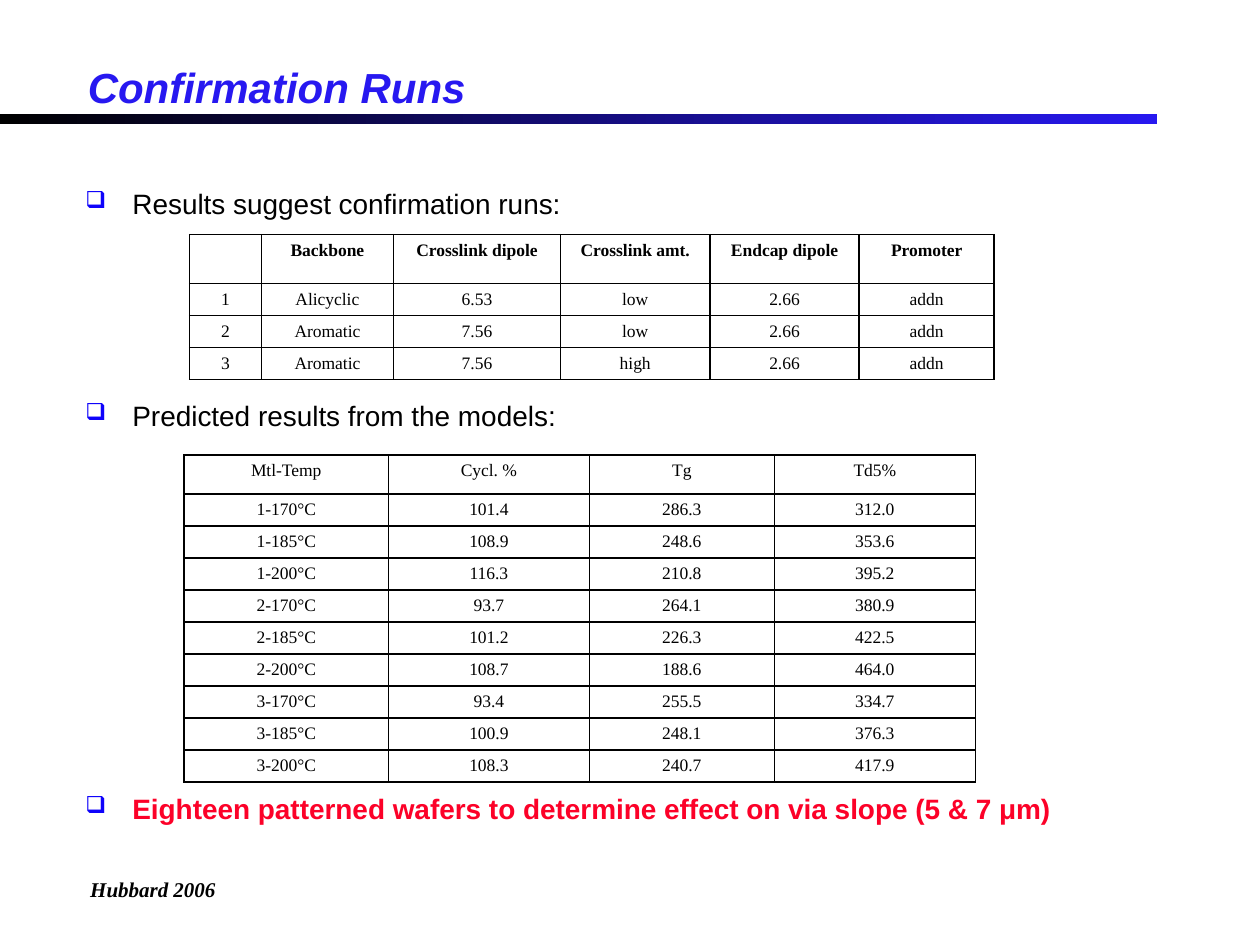
from lxml.etree import SubElement
from pptx import Presentation
from pptx.dml.color import RGBColor
from pptx.enum.shapes import MSO_SHAPE as Shape
from pptx.enum.text import MSO_ANCHOR as Anchor, PP_ALIGN as Align
from pptx.oxml.ns import qn
from pptx.util import Cm, Pt

COLORS = {"black": "000000", "blue": "2718F0", "bullet": "0F03FB", "red": "FC0128"}
SANS, SERIF = "Arial", "Times New Roman"


class SlideBuilder:
    def __init__(self, slide, colors):
        self.slide = slide
        self.colors = colors

    def color(self, name):
        return RGBColor.from_string(self.colors[name])

    def run(self, paragraph, text, size, font, color="black", bold=False, italic=False):
        run = paragraph.add_run()
        run.text = text
        run.font.size = Pt(size)
        run.font.name = font
        run.font.bold = bold
        run.font.italic = italic
        run.font.color.rgb = self.color(color)

    def frame(self, left, top, width, height, wrap=True, anchor=Anchor.TOP):
        box = self.slide.shapes.add_textbox(Cm(left), Cm(top), Cm(width), Cm(height))
        box.text_frame.word_wrap = wrap
        box.text_frame.vertical_anchor = anchor
        return box.text_frame

    def gradient_bar(self, left, top, width, height, start, end):
        bar = self.slide.shapes.add_shape(
            Shape.RECTANGLE, Cm(left), Cm(top), Cm(width), Cm(height))
        bar.shadow.inherit = False
        bar.line.fill.background()
        bar.fill.gradient()
        bar.fill.gradient_angle = 0
        for stop, name in zip(bar.fill.gradient_stops, (start, end)):
            stop.color.rgb = self.color(name)

    def heading(self, text, place, size, font, color, wrap=True, anchor=Anchor.TOP):
        frame = self.frame(*place, wrap=wrap, anchor=anchor)
        self.run(frame.paragraphs[0], text, size, font, color, bold=True, italic=True)

    def bullets(self, place, items):
        frame = self.frame(*place)
        for index, (text, gap, color, bold) in enumerate(items):
            paragraph = frame.add_paragraph() if index else frame.paragraphs[0]
            props = paragraph._p.get_or_add_pPr()
            props.set("marL", str(Cm(0.95)))
            props.set("indent", str(Cm(-0.95)))
            bullet_color = SubElement(props, qn("a:buClr"))
            SubElement(bullet_color, qn("a:srgbClr"), val=self.colors["bullet"])
            SubElement(props, qn("a:buSzPct"), val="84000")
            SubElement(props, qn("a:buChar"), char="❑")
            if gap:
                paragraph.space_before = Pt(gap)
            self.run(paragraph, text, 16, SANS, color, bold)

    def borders(self, cell):
        props = cell._tc.get_or_add_tcPr()
        for side in ("lnL", "lnR", "lnT", "lnB"):
            line = SubElement(props, qn(f"a:{side}"), w=str(Pt(1)))
            fill = SubElement(line, qn("a:solidFill"))
            SubElement(fill, qn("a:srgbClr"), val=self.colors["black"])

    def table(self, left, top, widths, header_height, row_height, rows, bold_header=False):
        heights = [header_height] + [row_height] * (len(rows) - 1)
        table = self.slide.shapes.add_table(
            len(rows), len(widths), Cm(left), Cm(top),
            Cm(sum(widths)), Cm(sum(heights))).table
        table.first_row = table.horz_banding = False
        for column, width in zip(table.columns, widths):
            column.width = Cm(width)
        for index, (row, height, values) in enumerate(zip(table.rows, heights, rows)):
            row.height = Cm(height)
            for cell, value in zip(row.cells, values):
                self.borders(cell)
                cell.fill.background()
                cell.margin_top, cell.margin_bottom = Cm(0.12), Cm(0.1)
                paragraph = cell.text_frame.paragraphs[0]
                paragraph.alignment = Align.CENTER
                if value:
                    self.run(paragraph, value, 10, SERIF, bold=bold_header and index == 0)
                else:
                    SubElement(paragraph._p, qn("a:endParaRPr"), sz="1000")


def main():
    deck = Presentation()
    deck.slide_width, deck.slide_height = Cm(25.4), Cm(19.05)
    page = SlideBuilder(deck.slides.add_slide(deck.slide_layouts[6]), COLORS)

    page.gradient_bar(0, 2.3, 23.32, 0.2, "black", "blue")
    page.heading("Hubbard 2006", (1.57, 17.55, 3.05, 0.76), 12, SERIF, "black", wrap=False)
    page.heading("Confirmation Runs", (1.52, 0.89, 22.58, 1.7), 24, SANS, "blue",
                 anchor=Anchor.MIDDLE)
    page.bullets((1.47, 3.63, 22.81, 13.97), [
        ("Results suggest confirmation runs:", 0, "black", False),
        ("Predicted results from the models:", 102, "black", False),
        ("Eighteen patterned wafers to determine effect on via slope (5 & 7 μm)",
         205.5, "red", True),
    ])

    confirmation_runs = [
        ("", "Backbone", "Crosslink dipole", "Crosslink amt.", "Endcap dipole", "Promoter"),
        ("1", "Alicyclic", "6.53", "low", "2.66", "addn"),
        ("2", "Aromatic", "7.56", "low", "2.66", "addn"),
        ("3", "Aromatic", "7.56", "high", "2.66", "addn"),
    ]
    page.table(3.82, 4.73, [1.45, 2.66, 3.37, 3.01, 3.01, 2.72], 0.99, 0.64,
               confirmation_runs, bold_header=True)

    predicted_results = [
        ("Mtl-Temp", "Cycl. %", "Tg", "Td5%"),
        ("1-170°C", "101.4", "286.3", "312.0"),
        ("1-185°C", "108.9", "248.6", "353.6"),
        ("1-200°C", "116.3", "210.8", "395.2"),
        ("2-170°C", "93.7", "264.1", "380.9"),
        ("2-185°C", "101.2", "226.3", "422.5"),
        ("2-200°C", "108.7", "188.6", "464.0"),
        ("3-170°C", "93.4", "255.5", "334.7"),
        ("3-185°C", "100.9", "248.1", "376.3"),
        ("3-200°C", "108.3", "240.7", "417.9"),
    ]
    page.table(3.71, 9.17, [4.12, 4.05, 3.73, 4.05], 0.79, 0.64, predicted_results)

    deck.save("out.pptx")


if __name__ == "__main__":
    main()
